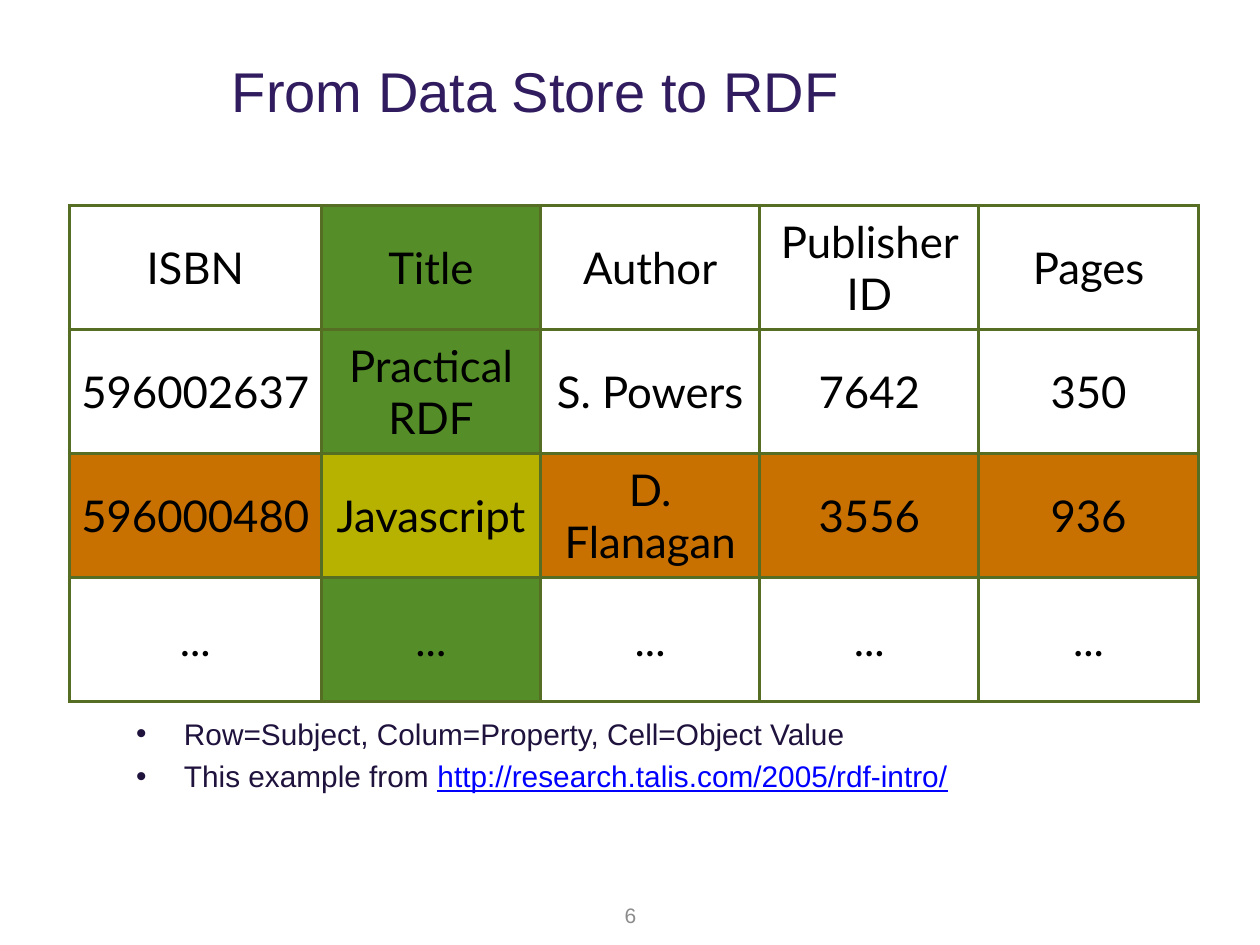
import pptx
import pptx.dml.color
import pptx.enum.text
import pptx.util
from lxml import etree
from pptx.oxml.ns import qn

Inches, Pt = pptx.util.Inches, pptx.util.Pt
ALIGN, ANCHOR = pptx.enum.text.PP_ALIGN, pptx.enum.text.MSO_ANCHOR
GREEN, ORANGE, OLIVE, BORDER = "558E28", "C97100", "B7B100", "566D24"


def color(value):
    return pptx.dml.color.RGBColor.from_string(value)


def add_run(p, text, size, value, font="Arial"):
    r = p.add_run()
    r.text = text
    r.font.size = Pt(size)
    r.font.name = font
    r.font.bold = False
    r.font.color.rgb = color(value)
    return r


prs = pptx.Presentation()
prs.slide_width, prs.slide_height = Inches(10), Inches(7.5)
s = prs.slides.add_slide(prs.slide_layouts[1])

# Title
title = s.shapes.title
title.left, title.top, title.width, title.height = map(Inches, (1.74, 0.36, 7.99, 0.71))
tf = title.text_frame
tf.auto_size = pptx.enum.text.MSO_AUTO_SIZE.NONE
tf.vertical_anchor = ANCHOR.MIDDLE
tf.paragraphs[0].alignment = ALIGN.LEFT
add_run(tf.paragraphs[0], "From Data Store to RDF", 32, "301C5E")

# Bulleted list, growing upwards from its bottom edge
body = s.placeholders[1]
body.left, body.top, body.width, body.height = map(Inches, (0.98, 5.96, 8.05, 0.39))
tf = body.text_frame
tf.auto_size = pptx.enum.text.MSO_AUTO_SIZE.NONE
tf.vertical_anchor = ANCHOR.BOTTOM
bullets = [
    [("Row=Subject, Colum=Property, Cell=Object Value", False)],
    [("This example from ", False), ("http://research.talis.com/2005/rdf-intro/", True)],
]
for i, runs in enumerate(bullets):
    p = tf.paragraphs[0] if i == 0 else tf.add_paragraph()
    pPr = p._p.get_or_add_pPr()
    pPr.set("marL", str(Inches(0.38)))
    pPr.set("indent", str(-Inches(0.38)))
    etree.SubElement(pPr, qn("a:buChar"), char="•")
    p.space_before = Pt(4 if i else 0)
    for text, is_link in runs:
        r = add_run(p, text, 17, "0000FF" if is_link else "1F123D")
        if is_link:
            r.font.underline = True

# Table: the Title column and the Javascript row are highlighted
rows = [
    ["ISBN", "Title", "Author", "Publisher ID", "Pages"],
    ["596002637", "Practical\nRDF", "S. Powers", "7642", "350"],
    ["596000480", "Javascript", "D. Flanagan", "3556", "936"],
    ["..."] * 5,
]
property_col, subject_row = 1, 2
frame = s.shapes.add_table(len(rows), len(rows[0]), Inches(0.55), Inches(1.63),
                           Inches(8.97), Inches(3.94))
table = frame.table
table.first_row = table.horz_banding = False
for j, column in enumerate(table.columns):
    column.width = Inches(1.74 if j else 2)
for i, row in enumerate(rows):
    table.rows[i].height = Inches(3.94 / len(rows))
    for j, text in enumerate(row):
        cell = table.cell(i, j)
        cell.vertical_anchor = ANCHOR.MIDDLE
        cell.margin_left = cell.margin_right = Inches(0.04)
        cell.margin_top = cell.margin_bottom = Inches(0.04)
        tcPr = cell._tc.get_or_add_tcPr()
        for side in ("lnL", "lnR", "lnT", "lnB"):
            ln = etree.SubElement(tcPr, qn("a:" + side), w=str(Pt(2)))
            etree.SubElement(etree.SubElement(ln, qn("a:solidFill")),
                             qn("a:srgbClr"), val=BORDER)
        in_col, in_row = j == property_col, i == subject_row
        if in_col or in_row:
            cell.fill.solid()
            cell.fill.fore_color.rgb = color(
                OLIVE if in_col and in_row else GREEN if in_col else ORANGE)
        else:
            cell.fill.background()
        for k, line in enumerate(text.split("\n")):
            p = cell.text_frame.paragraphs[0] if k == 0 else cell.text_frame.add_paragraph()
            p.alignment = ALIGN.CENTER
            add_run(p, line, 25, "000000", "Lato")

# Page number
number = s.shapes.add_textbox(*map(Inches, (4.86, 7.12, 0.26, 0.28)))
tf = number.text_frame
tf.word_wrap = True
tf.vertical_anchor = ANCHOR.MIDDLE
tf.margin_left = tf.margin_right = Inches(0.07)
tf.margin_top = tf.margin_bottom = Inches(0.04)
tf.paragraphs[0].alignment = ALIGN.RIGHT
add_run(tf.paragraphs[0], "6", 12, "8C8C8C")

prs.save("out.pptx")
